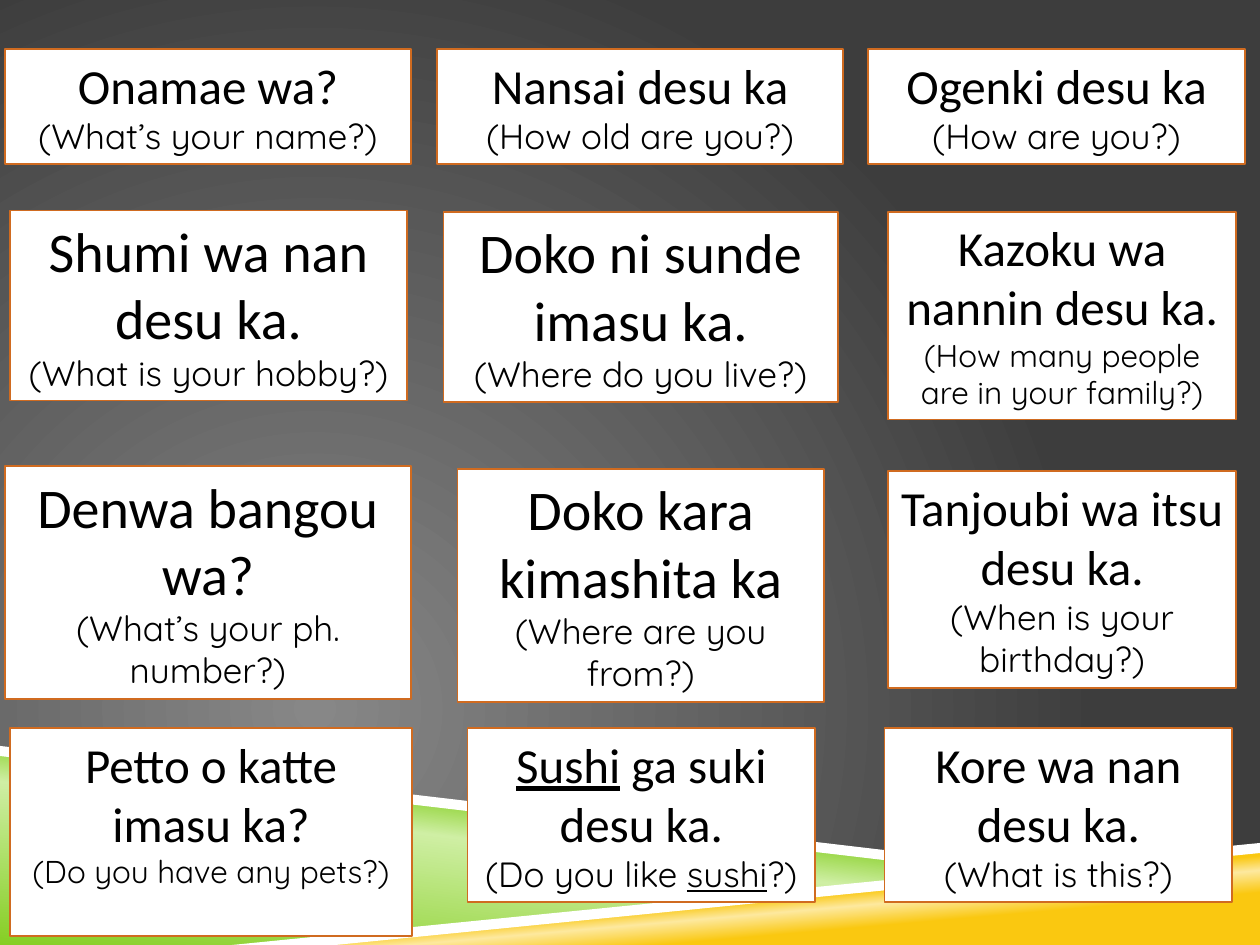
"""Build a slide of twelve Japanese question cards with English meanings."""
from lxml.etree import SubElement
from pptx import Presentation
from pptx.dml.color import RGBColor
from pptx.enum.text import MSO_ANCHOR, PP_ALIGN
from pptx.oxml.ns import qn
from pptx.util import Inches, Pt

WHITE = RGBColor(0xFF, 0xFF, 0xFF)
BLACK = RGBColor(0, 0, 0)
ORANGE = RGBColor(0xD0, 0x6B, 0x20)
GREY, CHARCOAL = RGBColor(0x87, 0x87, 0x87), RGBColor(0x3D, 0x3D, 0x3D)
GREEN, PALE_GREEN = RGBColor(0x86, 0xCE, 0x24), RGBColor(0xCF, 0xEF, 0xA4)
YELLOW, PALE_YELLOW = RGBColor(0xFA, 0xC8, 0x10), RGBColor(0xFD, 0xE9, 0x9F)

BACKDROP = [(0, GREY), (100, CHARCOAL)]
BACKDROP_CENTRE = {"l": 50, "t": 100, "r": 100, "b": 50}

BANDS = [
    ([(0, 5.97), (7.92, 6.92), (2, 7.5), (0, 7.5)],
     [(0, GREEN), (52, PALE_GREEN), (66, GREEN)], 277),
    ([(1.98, 7.5), (10, 6.72), (10, 7.5)],
     [(28, YELLOW), (40, PALE_YELLOW), (48, YELLOW)], 265),
    ([(0, 5.92), (0, 6), (7.9, 6.93), (8.32, 6.9)], None, None),
    ([(10, 6.69), (1.84, 7.5), (2.66, 7.5), (10, 6.77)], None, None),
]

UNDERLINE_MARK = "_"
CARDS = [
    ("Onamae wa?", 28, "(What’s your name?)", 20, (0.04, 0.39, 3.22, 0.91)),
    ("Nansai desu ka", 28, "(How old are you?)", 20, (3.47, 0.39, 3.22, 0.91)),
    ("Ogenki desu ka", 28, "(How are you?)", 20, (6.89, 0.39, 2.99, 0.91)),
    ("Shumi wa nan desu ka.", 32, "(What is your hobby?)", 20, (0.08, 1.67, 3.15, 1.51)),
    ("Doko ni sunde imasu ka.", 32, "(Where do you live?)", 20, (3.52, 1.68, 3.13, 1.51)),
    ("Kazoku wa nannin desu ka.", 28, "(How many people are in your family?)", 18,
     (7.05, 1.68, 2.76, 1.65)),
    ("Denwa bangou wa?", 32, "(What’s your ph. number?)", 20, (0.04, 3.7, 3.22, 1.85)),
    ("Doko kara kimashita ka", 32, "(Where are you from?)", 20, (3.63, 3.72, 2.91, 1.85)),
    ("Tanjoubi wa itsu desu ka.", 28, "(When is your birthday?)", 20, (7.05, 3.74, 2.76, 1.72)),
    ("Petto o katte imasu ka?", 28, "(Do you have any pets?)", 18, (0.08, 5.78, 3.19, 1.65)),
    ("_Sushi_ ga suki desu ka.", 28, "(Do you like _sushi_?)", 20, (3.71, 5.78, 2.76, 1.38)),
    ("Kore wa nan desu ka.", 28, "(What is this?)", 20, (7.02, 5.78, 2.76, 1.38)),
]
FRAME_FORMAT = {"word_wrap": True, "vertical_anchor": MSO_ANCHOR.TOP}


def set_gradient(fill, owner, stops, angle=None, centre=None):
    fill.gradient()
    gradient = next(owner.iter(qn("a:gradFill")))
    for child in list(gradient):
        gradient.remove(child)
    stop_list = SubElement(gradient, qn("a:gsLst"))
    for position, color in stops:
        stop = SubElement(stop_list, qn("a:gs"), pos=str(position * 1000))
        SubElement(stop, qn("a:srgbClr"), val=str(color))
    if centre:
        circle = SubElement(gradient, qn("a:path"), {"path": "circle"})
        SubElement(circle, qn("a:fillToRect"),
                   {side: str(share * 1000) for side, share in centre.items()})
    else:
        SubElement(gradient, qn("a:lin"), ang=str(angle * 60000), scaled="0")


def add_band(slide, points, stops, angle):
    start, *corners = [(Inches(x), Inches(y)) for x, y in points]
    outline = slide.shapes.build_freeform(*start)
    outline.add_line_segments(corners, close=True)
    band = outline.convert_to_shape()
    band.shadow.inherit = False
    band.line.fill.background()
    if stops:
        set_gradient(band.fill, band._element, stops, angle)
    else:
        band.fill.solid()
        band.fill.fore_color.rgb = WHITE


def write_line(paragraph, wording, size, font_name):
    paragraph.alignment = PP_ALIGN.CENTER
    for index, part in enumerate(wording.split(UNDERLINE_MARK)):
        if part:
            run = paragraph.add_run()
            run.text = part
            font_format = {"name": font_name, "size": Pt(size),
                           "underline": True if index % 2 else None}
            for key, value in font_format.items():
                setattr(run.font, key, value)
            run.font.color.rgb = BLACK


def add_card(slide, question, question_size, meaning, meaning_size, place):
    card = slide.shapes.add_textbox(*map(Inches, place))
    card.fill.solid()
    card.fill.fore_color.rgb = WHITE
    card.line.color.rgb = ORANGE
    card.line.width = Pt(1)
    frame = card.text_frame
    for key, value in FRAME_FORMAT.items():
        setattr(frame, key, value)
    write_line(frame.paragraphs[0], question, question_size, "Calibri")
    write_line(frame.add_paragraph(), meaning, meaning_size, "Quicksand")


def main():
    deck = Presentation()
    deck.slide_width, deck.slide_height = Inches(10), Inches(7.5)
    slide = deck.slides.add_slide(deck.slide_layouts[6])
    set_gradient(slide.background.fill, slide._element, BACKDROP, centre=BACKDROP_CENTRE)
    for band in BANDS:
        add_band(slide, *band)
    for card in CARDS:
        add_card(slide, *card)
    deck.save("out.pptx")


if __name__ == "__main__":
    main()
